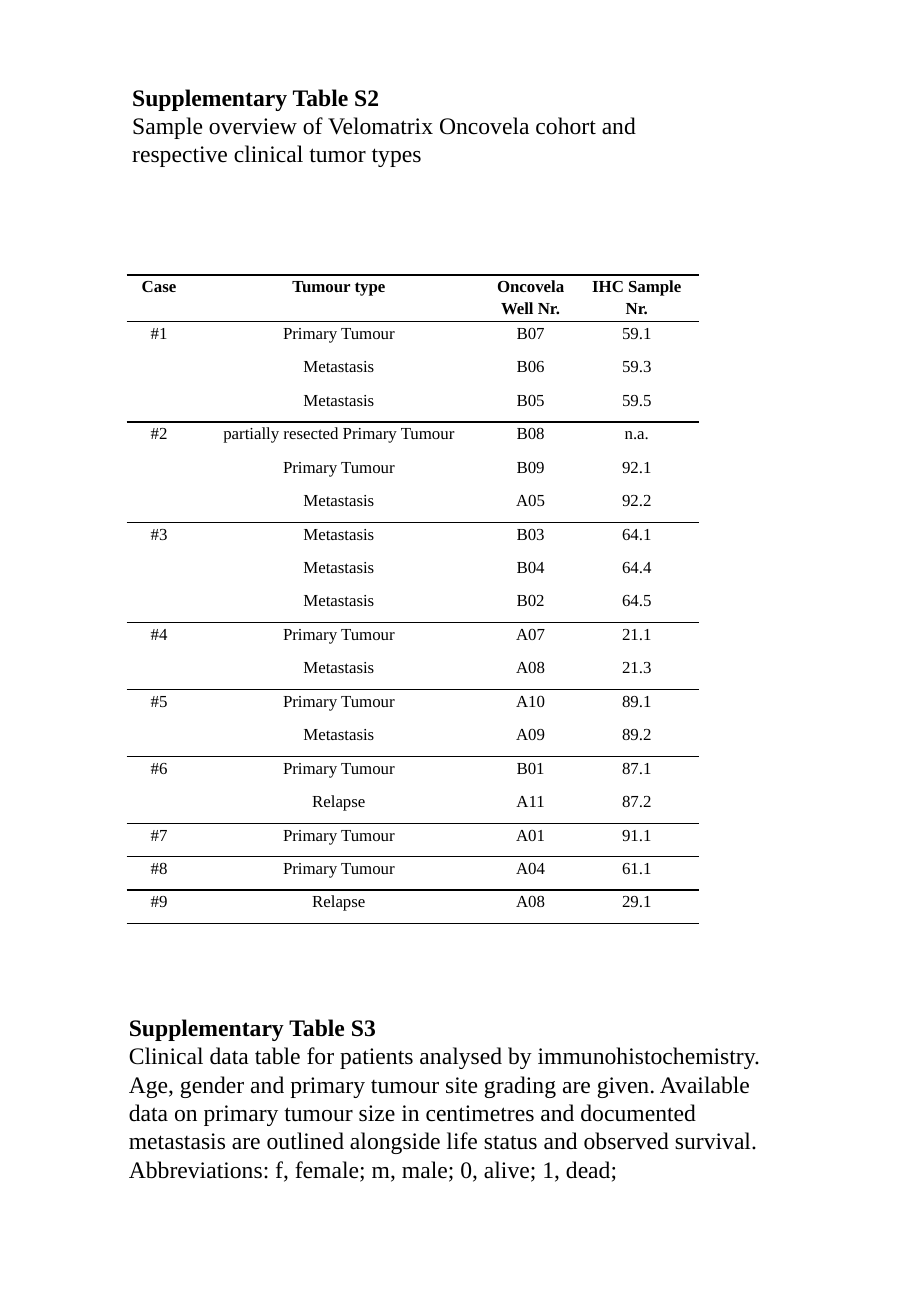
import pptx
import pptx.dml.color
import pptx.enum.text
import pptx.oxml
import pptx.oxml.ns
import pptx.util
from lxml import etree
from pptx.util import Cm, Pt

FONT = "Times New Roman"
BLACK = "000000"
NO_TABLE_STYLE = "{2D5ABB26-0587-4C30-8999-92F81FD0307C}"

# Heading, description, (left, top, width, height) in cm, heading line spacing
CAPTIONS = [
    ("Supplementary Table S2",
     "Sample overview of Velomatrix Oncovela cohort and respective clinical tumor types",
     (2.51, 1.6, 12.19, 2.06), 1.0),
    ("Supplementary Table S3",
     "Clinical data table for patients analysed by immunohistochemistry. "
     "Age, gender and primary tumour site grading are given. Available data on "
     "primary tumour size in centimetres and documented metastasis are outlined "
     "alongside life status and observed survival. "
     "Abbreviations: f, female; m, male; 0, alive; 1, dead;",
     (2.44, 20.75, 13.89, 4.14), 1.5),
]

HEADER = ("Case", "Tumour type", "Oncovela Well Nr.", "IHC Sample Nr.")
CASES = {
    "#1": [("Primary Tumour", "B07", "59.1"),
           ("Metastasis", "B06", "59.3"),
           ("Metastasis", "B05", "59.5")],
    "#2": [("partially resected Primary Tumour", "B08", "n.a."),
           ("Primary Tumour", "B09", "92.1"),
           ("Metastasis", "A05", "92.2")],
    "#3": [("Metastasis", "B03", "64.1"),
           ("Metastasis", "B04", "64.4"),
           ("Metastasis", "B02", "64.5")],
    "#4": [("Primary Tumour", "A07", "21.1"),
           ("Metastasis", "A08", "21.3")],
    "#5": [("Primary Tumour", "A10", "89.1"),
           ("Metastasis", "A09", "89.2")],
    "#6": [("Primary Tumour", "B01", "87.1"),
           ("Relapse", "A11", "87.2")],
    "#7": [("Primary Tumour", "A01", "91.1")],
    "#8": [("Primary Tumour", "A04", "61.1")],
    "#9": [("Relapse", "A08", "29.1")],
}
TABLE_LEFT, TABLE_TOP = 2.65, 5.75
COLUMN_WIDTHS = (1.35, 6.17, 1.85, 2.59)
ROW_HEIGHT = 0.7

CELL_FORMAT = {"margin_left": Cm(0.18), "margin_right": Cm(0.18),
               "margin_top": 0, "margin_bottom": 0}
CELL_PARAGRAPH = {"alignment": pptx.enum.text.PP_ALIGN.CENTER, "line_spacing": 1.15}
CAPTION_FRAME = {"word_wrap": True,
                 "vertical_anchor": pptx.enum.text.MSO_ANCHOR.TOP,
                 "auto_size": pptx.enum.text.MSO_AUTO_SIZE.SHAPE_TO_FIT_TEXT}


def apply(target, values):
    for name, value in values.items():
        setattr(target, name, value)


def set_color(color_owner, hex_color):
    color_owner.rgb = pptx.dml.color.RGBColor.from_string(hex_color)


def write(paragraph, text, size, bold):
    run = paragraph.add_run()
    run.text = text
    apply(run.font, {"name": FONT, "size": Pt(size), "bold": bold})
    set_color(run.font.color, BLACK)


def remove_bullet(paragraph):
    properties = paragraph._p.get_or_add_pPr()
    properties.set("marL", "0")
    properties.set("indent", "0")
    etree.SubElement(properties, pptx.oxml.ns.qn("a:buNone"))


def fill_caption(shape, heading, description, box, heading_spacing):
    apply(shape, dict(zip(("left", "top", "width", "height"), map(Cm, box))))
    frame = shape.text_frame
    apply(frame, CAPTION_FRAME)
    lines = [(heading, True, heading_spacing), (description, False, 1.0)]
    for index, (text, bold, spacing) in enumerate(lines):
        paragraph = frame.add_paragraph() if index else frame.paragraphs[0]
        apply(paragraph, {"alignment": pptx.enum.text.PP_ALIGN.LEFT,
                          "line_spacing": spacing,
                          "space_before": Pt(0), "space_after": Pt(0)})
        remove_bullet(paragraph)
        write(paragraph, text, 14, bold)


def add_border(cell, side):
    """Draw a 1 pt rule on one side of the cell: lnT for top, lnB for bottom."""
    cell._tc.get_or_add_tcPr().append(pptx.oxml.parse_xml(
        f'<a:{side} {pptx.oxml.ns.nsdecls("a")} w="{Pt(1)}">'
        f'<a:solidFill><a:srgbClr val="{BLACK}"/></a:solidFill></a:{side}>'))


def fill_cell(cell, text, bold, sides):
    apply(cell, CELL_FORMAT)
    paragraph = cell.text_frame.paragraphs[0]
    apply(paragraph, CELL_PARAGRAPH)
    if text:
        write(paragraph, text, 10, bold)
    else:
        etree.SubElement(paragraph._p, pptx.oxml.ns.qn("a:endParaRPr"), sz="1000")
    for side in sides:
        add_border(cell, side)
    cell.fill.background()


def add_sample_table(slide):
    rows = [(HEADER, True, ("lnT", "lnB"))]
    for case, samples in CASES.items():
        for index, sample in enumerate(samples):
            label = "" if index else case
            sides = ("lnB",) if index == len(samples) - 1 else ()
            rows.append(((label, *sample), False, sides))

    frame = slide.shapes.add_table(
        len(rows), len(HEADER), Cm(TABLE_LEFT), Cm(TABLE_TOP),
        Cm(sum(COLUMN_WIDTHS)), Cm(ROW_HEIGHT * len(rows)))
    for style in frame.element.iter(pptx.oxml.ns.qn("a:tableStyleId")):
        style.text = NO_TABLE_STYLE
    table = frame.table
    apply(table, {"first_row": False, "horz_banding": False})
    for column, width in zip(table.columns, COLUMN_WIDTHS):
        column.width = Cm(width)
    for row, (texts, bold, sides) in zip(table.rows, rows):
        row.height = Cm(ROW_HEIGHT)
        for cell, text in zip(row.cells, texts):
            fill_cell(cell, text, bold, sides)


def main():
    presentation = pptx.Presentation()
    apply(presentation, {"slide_width": Cm(19.05), "slide_height": Cm(27.51)})
    slide = presentation.slides.add_slide(presentation.slide_layouts[1])
    for shape, caption in zip(slide.placeholders, CAPTIONS):
        fill_caption(shape, *caption)
    add_sample_table(slide)
    presentation.save("out.pptx")


if __name__ == "__main__":
    main()
